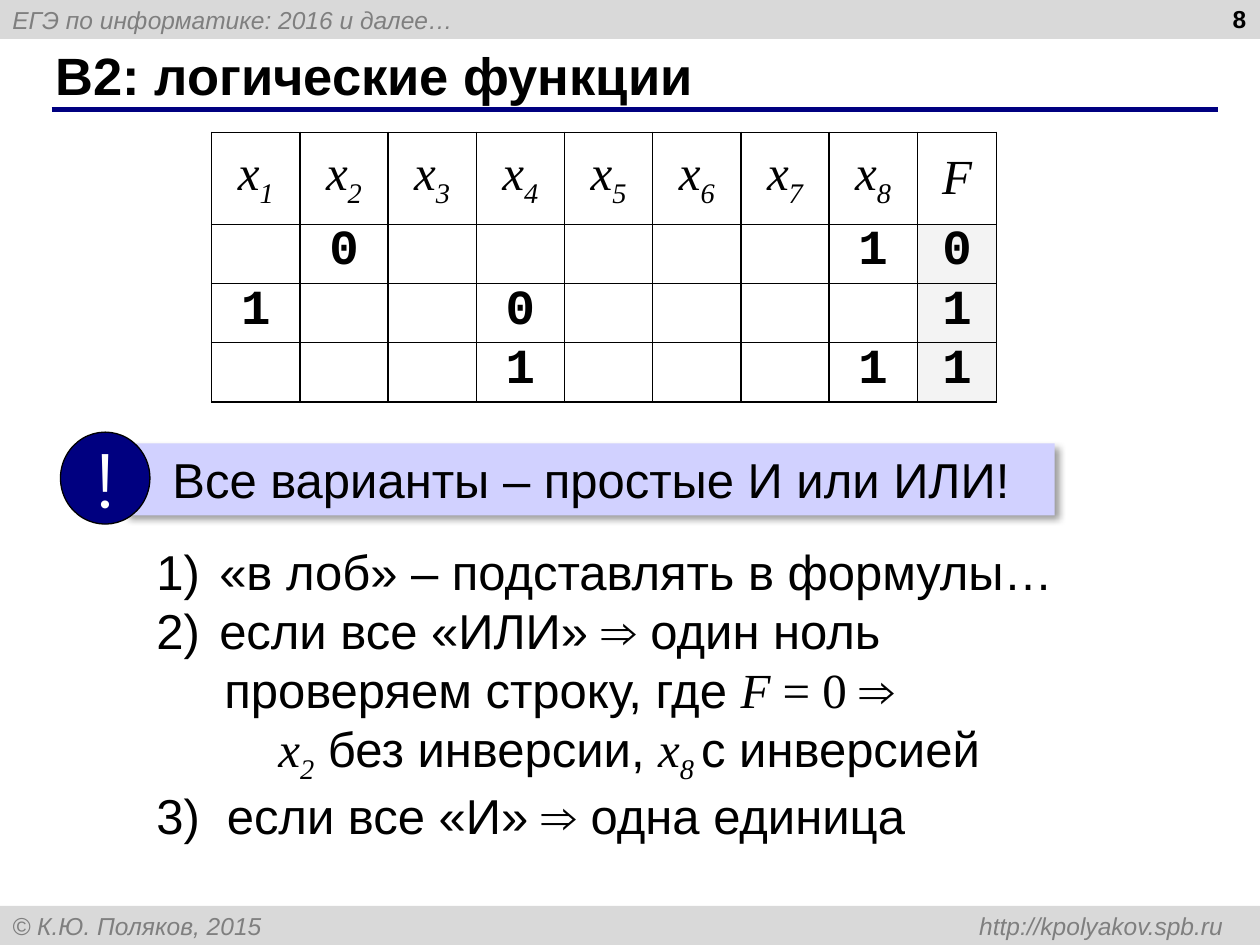
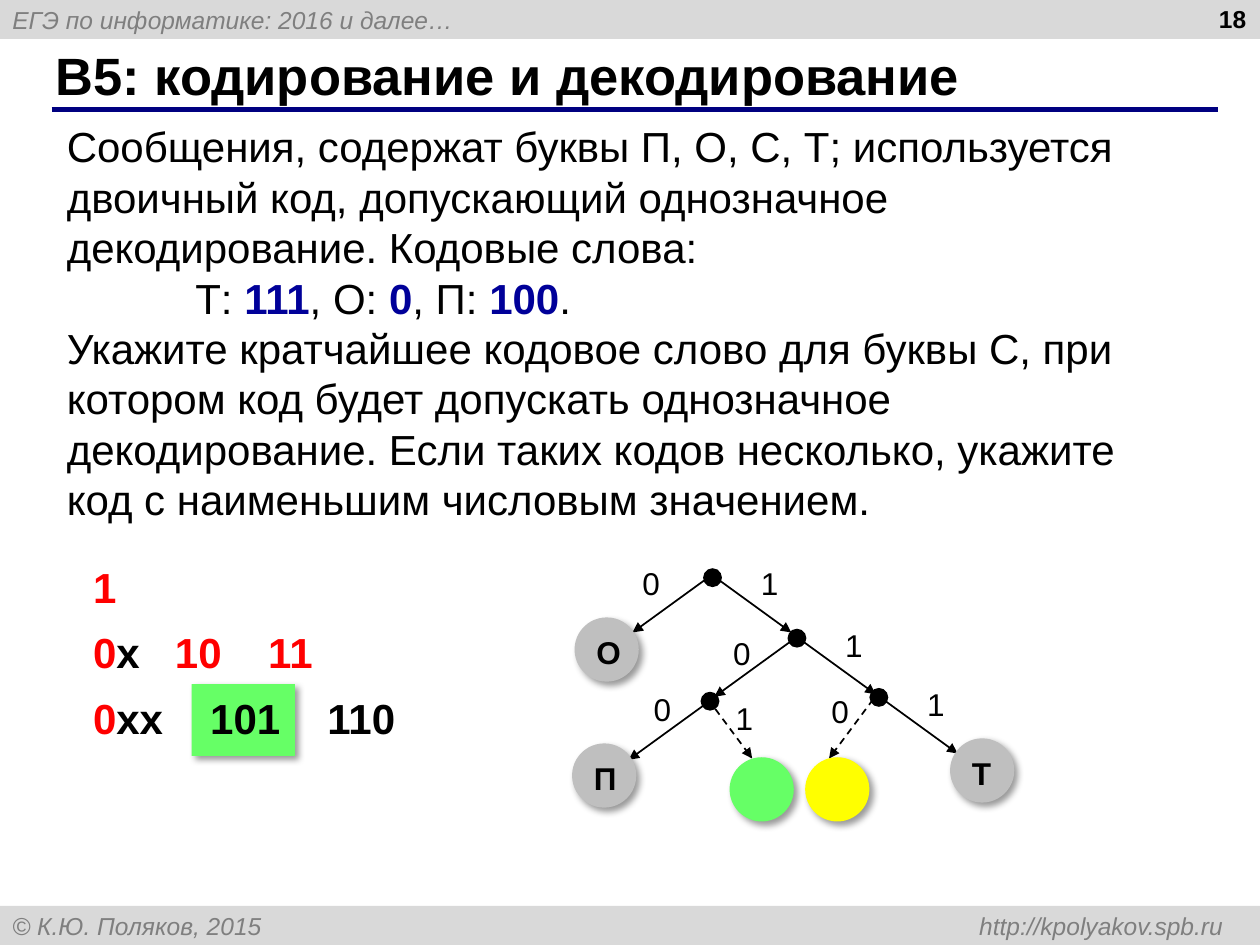
from lxml.etree import SubElement
from pptx import Presentation
from pptx.dml.color import RGBColor
from pptx.enum.dml import MSO_LINE
from pptx.enum.shapes import MSO_CONNECTOR, MSO_SHAPE
from pptx.enum.text import MSO_ANCHOR, MSO_AUTO_SIZE, PP_ALIGN
from pptx.oxml.ns import qn
from pptx.util import Inches, Pt

BLACK = RGBColor(0x00, 0x00, 0x00)
WHITE = RGBColor(0xFF, 0xFF, 0xFF)
NAVY = RGBColor(0x00, 0x00, 0x80)
BLUE = RGBColor(0x00, 0x00, 0x99)
RED = RGBColor(0xFF, 0x00, 0x00)
GREEN = RGBColor(0x66, 0xFF, 0x66)
YELLOW = RGBColor(0xFF, 0xFF, 0x00)
LILAC = RGBColor(0xD1, 0xD1, 0xFF)
BAND_GRAY = RGBColor(0xD9, 0xD9, 0xD9)
BAND_TEXT = RGBColor(0x7F, 0x7F, 0x7F)
LEAF_GRAY = RGBColor(0xBF, 0xBF, 0xBF)
CELL_GRAY = RGBColor(0xF3, 0xF3, 0xF3)

MATH = {"font": "Times New Roman", "italic": True}
SUBSCRIPT = {**MATH, "base": -25}
CODE = {"color": BLUE, "bold": True}


class Lecture:
    def __init__(self):
        self.deck = Presentation()
        self.deck.slide_width = Inches(10)
        self.deck.slide_height = Inches(7.5)
        self.page = None

    def new_page(self, title, number):
        self.page = self.deck.slides.add_slide(self.deck.slide_layouts[1])
        band_style = {"size": 14, "color": BAND_TEXT, "italic": True}
        for top, words in (
            (0, "ЕГЭ по информатике: 2016 и далее…"),
            (7.19, "© К.Ю. Поляков, 2015\thttp://kpolyakov.spb.ru"),
        ):
            band = self.shape(MSO_SHAPE.RECTANGLE, 0, top, 10, 0.31, BAND_GRAY)
            band.text_frame.vertical_anchor = MSO_ANCHOR.MIDDLE
            para = self.fill_text(band.text_frame, [[(words, {})]], **band_style)
            self.tabs(para, [9.61], "r")
        self.line(0.41, 0.87, 9.67, 0.87, NAVY, 3)

        heading = self.page.shapes.title
        self.place(heading, 0.34, 0.33, 9.16, 0.52)
        heading.text_frame.vertical_anchor = MSO_ANCHOR.MIDDLE
        self.fill_text(heading.text_frame, [[(title, {})]], size=30, bold=True)
        self.text(7.66, -0.02, 2.33, 0.52, [(number, {})],
                  size=14, bold=True, align=PP_ALIGN.RIGHT)

    def place(self, box, left, top, width, height):
        box.left, box.top = Inches(left), Inches(top)
        box.width, box.height = Inches(width), Inches(height)
        box.text_frame.word_wrap = True
        box.text_frame.auto_size = MSO_AUTO_SIZE.NONE

    def fill_text(self, frame, paragraphs, align=PP_ALIGN.LEFT, **base_style):
        for index, spans in enumerate(paragraphs):
            para = frame.add_paragraph() if index else frame.paragraphs[0]
            para.alignment = align
            para.space_before = Pt(0)
            for words, changes in spans:
                self.add_span(para, words, **{**base_style, **changes})
        return frame.paragraphs[0]

    def add_span(self, para, words, size=24, font="Arial", color=BLACK,
                 bold=False, italic=False, base=0):
        span = para.add_run()
        span.text = words
        span.font.size = Pt(size)
        span.font.name = font
        span.font.color.rgb = color
        span.font.bold = bold
        span.font.italic = italic
        if base:
            span._r.get_or_add_rPr().set("baseline", str(base * 1000))

    def indent(self, para, left, first=0):
        properties = para._p.get_or_add_pPr()
        properties.set("marL", str(Inches(left)))
        properties.set("indent", str(Inches(first)))
        return properties

    def tabs(self, para, stops, align="l"):
        tab_list = SubElement(para._p.get_or_add_pPr(), qn("a:tabLst"))
        for stop in stops:
            SubElement(tab_list, qn("a:tab"), pos=str(Inches(stop)), algn=align)

    def body(self, left, top, width, height, items, size):
        box = self.page.placeholders[1]
        self.place(box, left, top, width, height)
        self.fill_text(box.text_frame, [spans for spans, *_ in items], size=size)
        for para, (_, margin, number) in zip(box.text_frame.paragraphs, items):
            properties = self.indent(para, margin, -margin if number else 0)
            if number:
                SubElement(properties, qn("a:buFont"), typeface="Arial")
                SubElement(properties, qn("a:buAutoNum"),
                           type="arabicParenR", startAt=str(number))
            else:
                SubElement(properties, qn("a:buNone"))

    def text(self, left, top, width, height, spans, wrap=True, **style):
        box = self.page.shapes.add_textbox(
            Inches(left), Inches(top), Inches(width), Inches(height))
        box.text_frame.word_wrap = wrap
        return self.fill_text(box.text_frame, [spans], **style)

    def shape(self, kind, left, top, width, height, fill, outline=None, shadow=False):
        item = self.page.shapes.add_shape(
            kind, Inches(left), Inches(top), Inches(width), Inches(height))
        item.fill.solid()
        item.fill.fore_color.rgb = fill
        if outline is None:
            item.line.fill.background()
        else:
            item.line.color.rgb = outline
            item.line.width = Pt(0.75)
        item.shadow.inherit = False
        if shadow:
            effects = item._element.spPr.find(qn("a:effectLst"))
            outer = SubElement(effects, qn("a:outerShdw"), blurRad=str(Pt(4)),
                               dist=str(Pt(3)), dir=str(45 * 60000),
                               algn="tl", rotWithShape="0")
            color = SubElement(outer, qn("a:srgbClr"), val=str(BLACK))
            SubElement(color, qn("a:alpha"), val="40000")
        item.text_frame.word_wrap = True
        item.text_frame.vertical_anchor = MSO_ANCHOR.TOP
        return item

    def line(self, x1, y1, x2, y2, color=BLACK, width=1, arrow=False, dashed=False):
        link = self.page.shapes.add_connector(
            MSO_CONNECTOR.STRAIGHT, Inches(x1), Inches(y1), Inches(x2), Inches(y2))
        link.line.color.rgb = color
        link.line.width = Pt(width)
        if dashed:
            link.line.dash_style = MSO_LINE.DASH
        properties = link._element.spPr
        if arrow:
            SubElement(properties.find(qn("a:ln")), qn("a:tailEnd"), type="triangle")
        SubElement(properties, qn("a:effectLst"))

    def disc(self, left, top, fill, letter=None):
        leaf = self.shape(MSO_SHAPE.OVAL, left, top, 0.51, 0.51, fill, shadow=True)
        if letter:
            self.fill_text(leaf.text_frame, [[(letter, {})]], size=18, bold=True)

    def table(self, left, top, widths, heights, rows):
        grid = self.page.shapes.add_table(
            len(heights), len(widths), Inches(left), Inches(top),
            Inches(sum(widths)), Inches(sum(heights))).table
        for column, width in zip(grid.columns, widths):
            column.width = Inches(width)
        for row, height in zip(grid.rows, heights):
            row.height = Inches(height)
        last = len(widths) - 1
        for r, row in enumerate(rows):
            for c, spans in enumerate(row):
                cell = grid.cell(r, c)
                cell.margin_left = cell.margin_right = Inches(0.08)
                cell.margin_top = cell.margin_bottom = 0
                cell.vertical_anchor = MSO_ANCHOR.TOP if r else MSO_ANCHOR.MIDDLE
                self.fill_text(cell.text_frame, [spans], PP_ALIGN.CENTER, size=28)
                self.borders(cell)
                cell.fill.solid()
                cell.fill.fore_color.rgb = CELL_GRAY if r and c == last else WHITE

    def borders(self, cell):
        properties = cell._tc.get_or_add_tcPr()
        for side in ("a:lnL", "a:lnR", "a:lnT", "a:lnB"):
            edge = SubElement(properties, qn(side), w=str(Pt(1)))
            fill = SubElement(edge, qn("a:solidFill"))
            SubElement(fill, qn("a:srgbClr"), val=str(BLACK))


def logic_page(lecture):
    lecture.new_page("B2: логические функции", "8")
    header = [[("x", MATH), (str(n), SUBSCRIPT)] for n in range(1, 9)]
    header.append([("F", MATH)])
    digit = {"font": "Courier New", "bold": True}
    truth_rows = [[[(mark, digit)] if mark != "." else [] for mark in marks]
                  for marks in (".0.....10", "1..0....1", "...1...11")]
    lecture.table(1.68, 1.05, [0.7] * 8 + [0.63], [0.73] + [0.47] * 3,
                  [header] + truth_rows)

    lecture.body(1.14, 4.25, 7.55, 2.46, [
        ([("«в лоб» – подставлять в формулы…", {})], 0.5, 1),
        ([("если все «ИЛИ» ⇒ один ноль", {})], 0.5, 2),
        ([("проверяем строку, где ", {}), ("F ", MATH),
          ("= 0 ", {"font": "Times New Roman"}), ("⇒", {})], 0.54, None),
        ([("x", MATH), ("2", SUBSCRIPT), (" без инверсии, ", {}),
          ("x", MATH), ("8 ", SUBSCRIPT), ("с инверсией", {})], 0.97, None),
        ([("если все «И» ⇒ одна единица", {})], 0.56, 3),
    ], 28)

    callout = lecture.shape(MSO_SHAPE.RECTANGLE, 0.99, 3.52, 7.38, 0.57, LILAC, shadow=True)
    callout.text_frame.vertical_anchor = MSO_ANCHOR.MIDDLE
    para = lecture.fill_text(callout.text_frame,
                             [[("Все варианты – простые И или ИЛИ!", {})]], size=28)
    lecture.indent(para, 0.28)
    badge = lecture.shape(MSO_SHAPE.OVAL, 0.48, 3.43, 0.71, 0.73, NAVY, BLACK)
    badge.text_frame.word_wrap = False
    badge.text_frame.vertical_anchor = MSO_ANCHOR.MIDDLE
    lecture.fill_text(badge.text_frame, [[("!", {})]], PP_ALIGN.CENTER,
                      size=44, font="Montserrat", color=WHITE)


def coding_page(lecture):
    lecture.new_page("B5: кодирование и декодирование", "18")
    lecture.body(0.43, 0.91, 9.25, 3.33, [
        ([("Сообщения, содержат буквы П, О, С, Т; используется двоичный код, "
           "допускающий однозначное", {})], 0, None),
        ([("декодирование. Кодовые слова:", {})], 0, None),
        ([("Т: ", {}), ("111", CODE), (", О: ", {}), ("0", CODE),
          (", П: ", {}), ("100", CODE), (".", {})], 1.02, None),
        ([("Укажите кратчайшее кодовое слово для буквы С, при котором код будет "
           "допускать однозначное декодирование. Если таких кодов несколько, "
           "укажите", {})], 0, None),
        ([("код с наименьшим числовым значением.", {})], 0, None),
    ], 24)

    lecture.shape(MSO_SHAPE.RECTANGLE, 1.52, 5.43, 0.82, 0.57, GREEN, shadow=True)
    red = {"color": RED}
    for top, spans, stops in (
        (4.41, [("1", red)], []),
        (4.92, [("0", red), ("x", {}), ("\t10\t11", red)], [0.65, 1.39]),
        (5.45, [("0", red), ("xx\t101\t110", {})], [0.93, 1.86]),
    ):
        para = lecture.text(0.64, top, 2.79, 0.5, spans, bold=True)
        if stops:
            lecture.tabs(para, stops)

    for left, top in ((5.58, 4.51), (6.25, 4.99), (6.9, 5.46), (5.56, 5.49)):
        lecture.shape(MSO_SHAPE.OVAL, left, top, 0.15, 0.15, BLACK)
    solid, dashed = (0.62, 0.45), (0.35, 0.47)
    for x, y, (run, drop), bit, label_left, label_top in (
        (5.64, 4.57, solid, 0, 5, 4.43),
        (5.66, 4.57, solid, 1, 5.94, 4.43),
        (6.29, 5.08, solid, 0, 5.72, 4.98),
        (6.33, 5.06, solid, 1, 6.61, 4.92),
        (5.61, 5.58, solid, 0, 5.09, 5.43),
        (6.98, 5.53, solid, 1, 7.26, 5.39),
        (5.62, 5.55, dashed, 1, 5.74, 5.5),
        (6.93, 5.55, dashed, 0, 6.5, 5.44),
    ):
        end = x + run if bit else x - run
        lecture.line(x, y, end, y + drop, arrow=True, dashed=(run, drop) == dashed)
        lecture.text(label_left, label_top, 0.34, 0.4, [(str(bit), {})],
                     wrap=False, size=18)
    lecture.disc(4.56, 4.9, LEAF_GRAY, "О")
    lecture.disc(4.54, 5.9, LEAF_GRAY, "П")
    lecture.disc(7.54, 5.86, LEAF_GRAY, "Т")
    lecture.disc(5.79, 6.01, GREEN)
    lecture.disc(6.39, 6.01, YELLOW)


def main():
    lecture = Lecture()
    logic_page(lecture)
    coding_page(lecture)
    lecture.deck.save("out.pptx")


if __name__ == "__main__":
    main()
